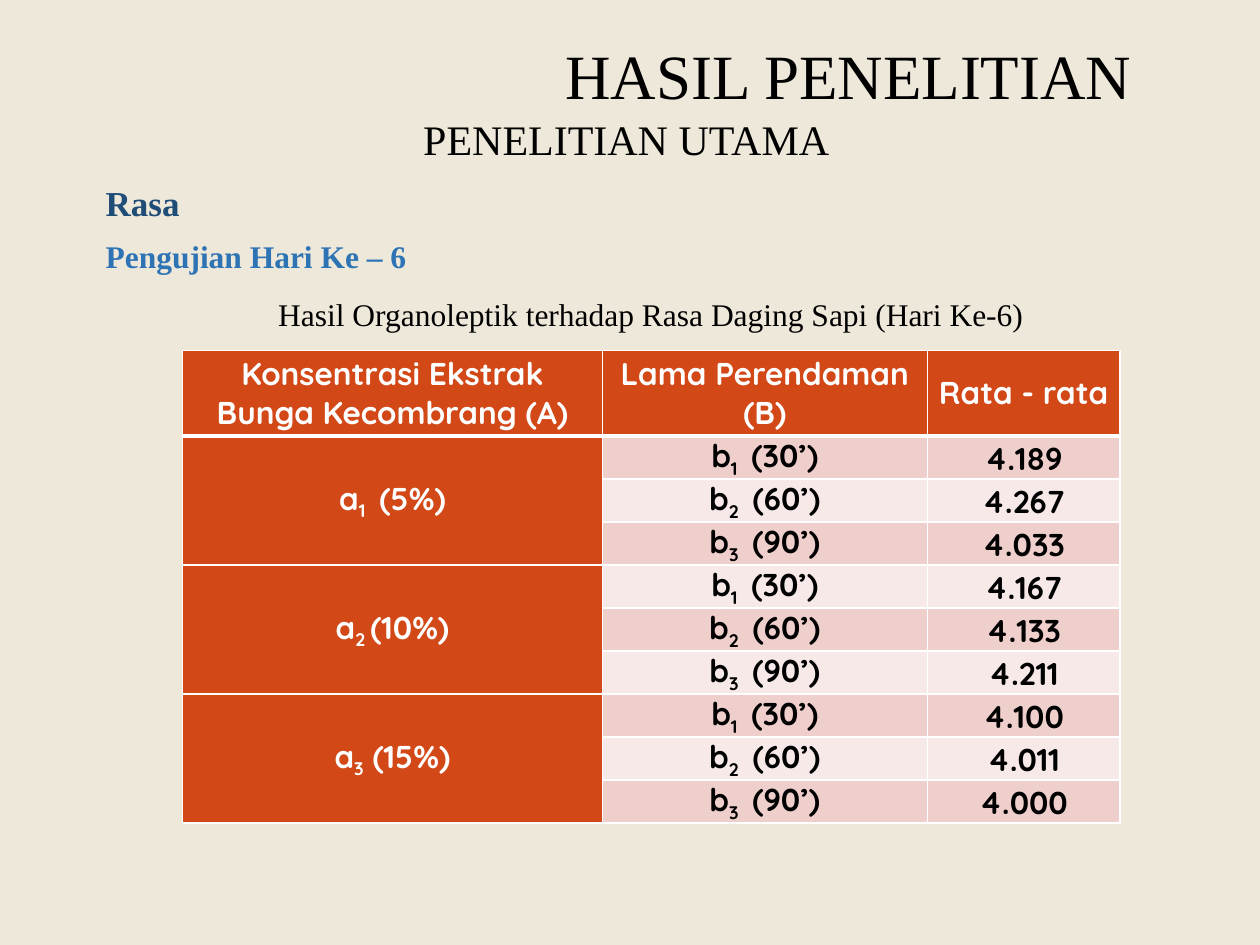
from pptx import Presentation
from pptx.dml.color import RGBColor
from pptx.enum.text import MSO_ANCHOR as ANCHOR, MSO_AUTO_SIZE as AUTO, PP_ALIGN as ALIGN
from pptx.oxml import parse_xml
from pptx.oxml.ns import nsdecls
from pptx.util import Inches, Pt

BEIGE = RGBColor(0xEE, 0xE8, 0xDA)
BLACK = RGBColor(0x00, 0x00, 0x00)
WHITE = RGBColor(0xFF, 0xFF, 0xFF)
NAVY = RGBColor(0x1F, 0x4D, 0x78)
BLUE = RGBColor(0x2E, 0x74, 0xB5)
ORANGE = RGBColor(0xD3, 0x48, 0x17)
BANDS = (RGBColor(0xEF, 0xCF, 0xCC), RGBColor(0xF7, 0xE9, 0xE8))

HEADERS = (
    ("Konsentrasi Ekstrak Bunga Kecombrang (A)", 1),
    ("Lama Perendaman (B)", 1),
    ("Rata - rata", 3),
)
CONCENTRATIONS = (("a", "1 ", " (5%)"), ("a", "2 ", "(10%)"), ("a", "3", " (15%)"))
DURATIONS = (("b", "1 ", " (30’)"), ("b", "2 ", " (60’)"), ("b", "3 ", " (90’)"))
MEANS = (
    ("4.189", "4.267", "4.033"),
    ("4.167", "4.133", "4.211"),
    ("4.100", "4.011", "4.000"),
)


class SlideBuilder:
    """Holds the fonts and the current slide, and adds text boxes and table parts."""

    text_font = "Times New Roman"
    table_font = "Quicksand"

    def __init__(self, prs):
        self.s = prs.slides.add_slide(prs.slide_layouts[6])
        fill = self.s.background.fill
        fill.solid()
        fill.fore_color.rgb = BEIGE

    def run(self, p, text, font, size, color, bold=False):
        r = p.add_run()
        r.text = text
        r.font.name = font
        r.font.size = Pt(size)
        r.font.bold = bold
        r.font.color.rgb = color
        return r

    def text(self, box, text, size, color=BLACK, bold=False, align=ALIGN.LEFT,
             spacing=1.0, anchor=ANCHOR.TOP, wrap=True, grow=False):
        tf = self.s.shapes.add_textbox(*map(Inches, box)).text_frame
        tf.word_wrap = wrap
        tf.auto_size = AUTO.SHAPE_TO_FIT_TEXT if grow else AUTO.NONE
        tf.vertical_anchor = anchor
        p = tf.paragraphs[0]
        p.alignment = align
        p.line_spacing = spacing
        self.run(p, text, self.text_font, size, color, bold)

    def table(self, box, widths, heights):
        tbl = self.s.shapes.add_table(len(heights), len(widths), *map(Inches, box)).table
        for column, width in zip(tbl.columns, widths):
            column.width = Inches(width)
        for row, height in zip(tbl.rows, heights):
            row.height = Inches(height)
        return tbl

    def borders(self, cell, top=1, bottom=1):
        tcPr = cell._tc.get_or_add_tcPr()
        for side, width in (("L", 1), ("R", 1), ("T", top), ("B", bottom)):
            tcPr.append(parse_xml(
                f'<a:ln{side} {nsdecls("a")} w="{Pt(width)}"><a:solidFill>'
                f'<a:srgbClr val="{WHITE}"/></a:solidFill></a:ln{side}>'))

    def cell(self, cell, parts, fill, color, after=3, spacing=1.0):
        cell.fill.solid()
        cell.fill.fore_color.rgb = fill
        cell.vertical_anchor = ANCHOR.MIDDLE
        cell.margin_left = cell.margin_right = Inches(0.07)
        cell.margin_top = cell.margin_bottom = 0
        p = cell.text_frame.paragraphs[0]
        p.alignment = ALIGN.CENTER
        p.space_after = Pt(after)
        p.line_spacing = spacing
        for i, part in enumerate(parts):
            r = self.run(p, part, self.table_font, 18, color, True)
            if i == 1:
                r.font._element.set("baseline", "-25000")


def add_taste_table(slide):
    tbl = slide.table((1.45, 2.78, 7.44, 3.57), (3.33, 2.58, 1.53), [0.68] + [0.3] * 9)
    for i in range(len(tbl.rows)):
        for j in range(len(tbl.columns)):
            slide.borders(tbl.cell(i, j), 3 if i == 1 else 1, 3 if i == 0 else 1)
    for j, (header, after) in enumerate(HEADERS):
        slide.cell(tbl.cell(0, j), [header], ORANGE, WHITE, after)
    for group, (concentration, means) in enumerate(zip(CONCENTRATIONS, MEANS)):
        first = 1 + group * len(DURATIONS)
        tbl.cell(first, 0).merge(tbl.cell(first + len(DURATIONS) - 1, 0))
        slide.cell(tbl.cell(first, 0), concentration, ORANGE, WHITE)
        for row, (duration, mean) in enumerate(zip(DURATIONS, means), first):
            band = BANDS[(row - 1) % 2]
            slide.cell(tbl.cell(row, 1), duration, band, BLACK)
            slide.cell(tbl.cell(row, 2), [mean], band, BLACK, after=1, spacing=1.07)


def main():
    prs = Presentation()
    prs.slide_width, prs.slide_height = Inches(10), Inches(7.5)
    slide = SlideBuilder(prs)
    slide.text((2.11, 0.3, 6.97, 0.66), "HASIL PENELITIAN", 36,
               align=ALIGN.RIGHT, spacing=0.9, anchor=ANCHOR.MIDDLE)
    slide.text((1.26, 0.95, 5.42, 0.4), "PENELITIAN UTAMA", 24,
               align=ALIGN.RIGHT, spacing=0.7, anchor=ANCHOR.MIDDLE)
    slide.text((0.74, 1.53, 2.74, 0.71), "Pengujian Hari Ke – 6", 18, BLUE, True,
               spacing=2.0, wrap=False, grow=True)
    slide.text((0.74, 1.06, 0.79, 0.68), "Rasa", 20, NAVY, True,
               spacing=2.0, wrap=False, grow=True)
    add_taste_table(slide)
    slide.text((2.11, 2.29, 6.56, 0.4),
               "Hasil Organoleptik terhadap Rasa Daging Sapi (Hari Ke-6)", 18, grow=True)
    prs.save("out.pptx")


if __name__ == "__main__":
    main()
